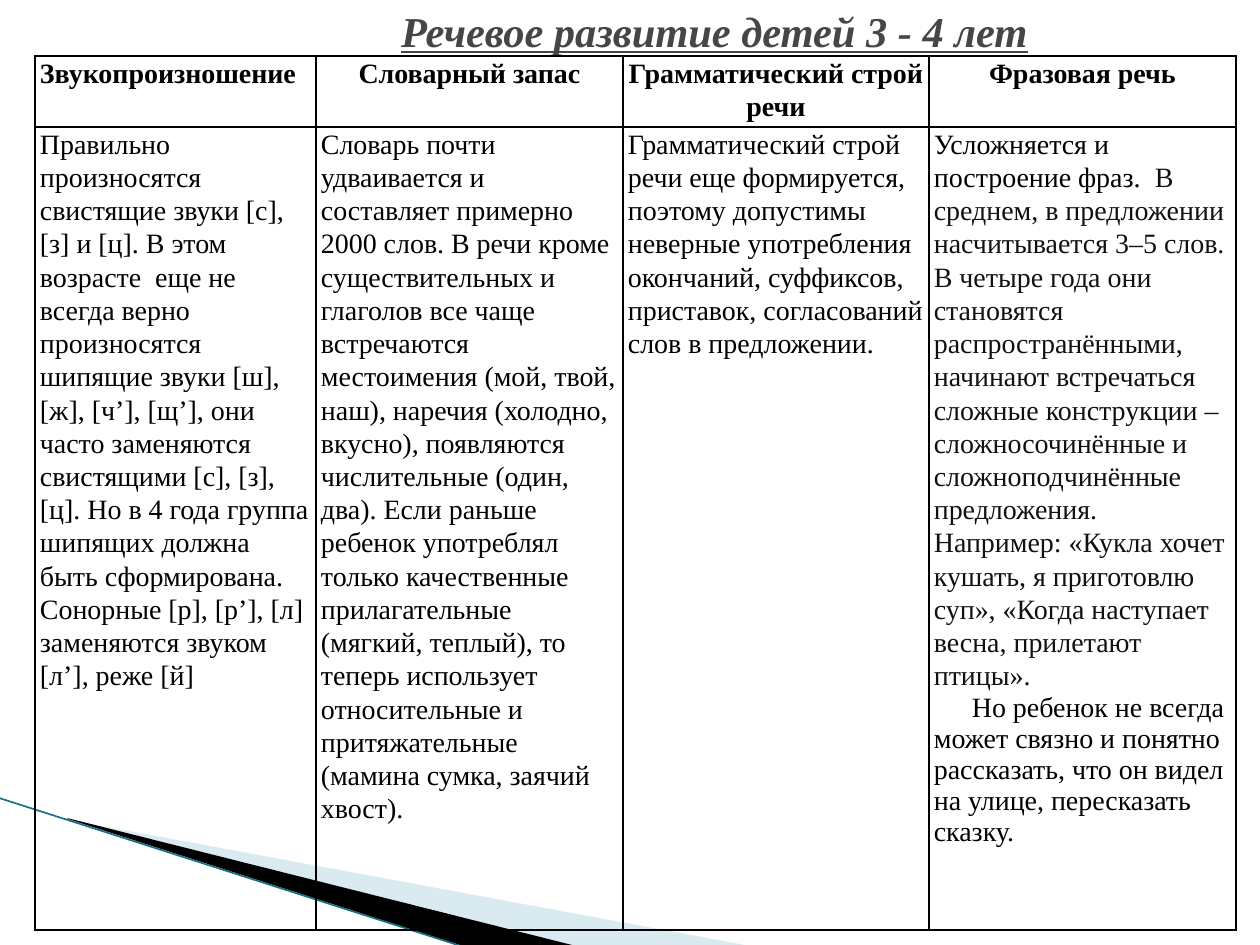
from lxml.etree import SubElement
from pptx import Presentation
from pptx.dml.color import RGBColor
from pptx.enum.shapes import MSO_CONNECTOR as Connector
from pptx.enum.text import MSO_ANCHOR as Anchor, PP_ALIGN as Align
from pptx.oxml.ns import qn
from pptx.util import Pt

EMU_PER_PX = 914400 / 126
COLORS = {
    "title": "464646",
    "text": "000000",
    "soft_text": "111111",
    "border": "000000",
    "pale_wedge": "A0CBDC",
    "dark_wedge": "000000",
    "edge": "1B6F85",
}


def px(value):
    return round(value * EMU_PER_PX)


class SlideBuilder:
    font_name = "Times New Roman"
    text_size = 16
    line_spacing = 1.07
    cell_inset = 5

    def __init__(self, slide):
        self.slide = slide

    def color(self, name):
        return RGBColor.from_string(COLORS[name])

    def style_font(self, font, size, color, bold=False):
        font.name = self.font_name
        font.size = Pt(size)
        font.bold = bold
        font.color.rgb = self.color(color)

    def title(self, text, left, top, width, height):
        shape = self.slide.shapes.title
        shape.left, shape.top = px(left), px(top)
        shape.width, shape.height = px(width), px(height)
        frame = shape.text_frame
        frame.text = text
        frame.word_wrap = True
        frame.vertical_anchor = Anchor.MIDDLE
        frame.margin_top = frame.margin_bottom = 0
        paragraph = frame.paragraphs[0]
        paragraph.alignment = Align.CENTER
        font = paragraph.runs[0].font
        self.style_font(font, 24.3, "title", bold=True)
        font.italic = font.underline = True

    def wedge(self, points, color, opacity=100):
        builder = self.slide.shapes.build_freeform(*points[0], scale=EMU_PER_PX)
        builder.add_line_segments(points[1:], close=True)
        shape = builder.convert_to_shape()
        shape.shadow.inherit = False
        shape.line.fill.background()
        shape.fill.solid()
        shape.fill.fore_color.rgb = self.color(color)
        if opacity < 100:
            tone = shape.fill._xPr.find(qn("a:solidFill"))[0]
            SubElement(tone, qn("a:alpha"), val=str(opacity * 1000))

    def line(self, start, end, color, width):
        ends = [px(value) for value in (*start, *end)]
        connector = self.slide.shapes.add_connector(Connector.STRAIGHT, *ends)
        connector.line.color.rgb = self.color(color)
        connector.line.width = Pt(width)
        SubElement(connector._element.spPr, qn("a:effectLst"))

    def table(self, rows, left, top, widths, heights):
        frame = self.slide.shapes.add_table(
            len(heights), len(widths), px(left), px(top),
            px(sum(widths)), px(sum(heights)))
        table = frame.table
        table.first_row = table.horz_banding = False
        for column, width in zip(table.columns, widths):
            column.width = px(width)
        for row, height in zip(table.rows, heights):
            row.height = px(height)
        for row_index, row in enumerate(rows):
            for column_index, paragraphs in enumerate(row):
                header = row_index == 0
                centered = header and column_index > 0
                self.cell(table.cell(row_index, column_index),
                          paragraphs, header, centered)

    def cell(self, cell, paragraphs, bold, centered):
        cell.margin_left = cell.margin_right = px(self.cell_inset)
        cell.margin_top = cell.margin_bottom = 0
        cell.vertical_anchor = Anchor.TOP
        self.borders(cell)
        cell.fill.background()
        frame = cell.text_frame
        for index, (runs, indent) in enumerate(paragraphs):
            paragraph = frame.add_paragraph() if index else frame.paragraphs[0]
            paragraph.alignment = Align.CENTER if centered else Align.LEFT
            if indent:
                properties = paragraph._p.get_or_add_pPr()
                properties.set("marL", "0")
                properties.set("indent", str(px(indent)))
            else:
                paragraph.line_spacing = self.line_spacing
            for text, color in runs:
                run = paragraph.add_run()
                run.text = text
                self.style_font(run.font, self.text_size, color, bold)

    def borders(self, cell):
        properties = cell._tc.get_or_add_tcPr()
        for side in ("lnL", "lnR", "lnT", "lnB"):
            border = SubElement(properties, qn(f"a:{side}"), w=str(Pt(1)))
            fill = SubElement(border, qn("a:solidFill"))
            SubElement(fill, qn("a:srgbClr"), val=COLORS["border"])


def plain(text):
    return [(text, "text")], 0


HEADERS = ["Звукопроизношение", "Словарный запас",
           "Грамматический строй речи", "Фразовая речь"]

SOUNDS = [
    plain("Правильно произносятся свистящие звуки [с], [з] и [ц]. В этом "
          "возрасте  еще не всегда верно произносятся шипящие звуки [ш], [ж], "
          "[ч’], [щ’], они часто заменяются свистящими [с], [з], [ц]. Но в "
          "4 года группа шипящих должна быть сформирована."),
    plain("Сонорные [р], [р’], [л]  заменяются звуком [л’], реже [й]"),
]
VOCABULARY = [
    plain("Словарь почти удваивается и составляет примерно 2000 слов. В речи "
          "кроме существительных и глаголов все чаще встречаются местоимения "
          "(мой, твой, наш), наречия (холодно, вкусно), появляются "
          "числительные (один, два). Если раньше ребенок употреблял только "
          "качественные прилагательные (мягкий, теплый), то теперь использует "
          "относительные и притяжательные (мамина сумка, заячий хвост)."),
]
GRAMMAR = [
    plain("Грамматический строй речи еще формируется, поэтому допустимы "
          "неверные употребления окончаний, суффиксов, приставок, "
          "согласований слов в предложении."),
]
PHRASES = [
    ([("Усложняется и построение фраз.", "text"),
      ("  В среднем, в предложении насчитывается 3–5 слов. В четыре года они "
       "становятся распространёнными, начинают встречаться сложные "
       "конструкции – сложносочинённые и сложноподчинённые предложения. "
       "Например: «Кукла хочет кушать, я приготовлю суп», «Когда наступает "
       "весна, прилетают птицы».", "soft_text")], 0),
    ([("Но ребенок не всегда может связно и понятно рассказать, что он видел "
       "на улице, пересказать сказку.", "text")], 38),
]


def main():
    presentation = Presentation()
    presentation.slide_width, presentation.slide_height = px(1260), px(945)
    layout = presentation.slide_layouts.get_by_name("Title Only")
    builder = SlideBuilder(presentation.slides.add_slide(layout))

    # Corner decoration
    builder.wedge([(69, 820), (750, 946), (575, 946), (69, 819)],
                  "pale_wedge", opacity=40)
    builder.wedge([(67, 818), (576, 946), (469, 948), (68, 819)], "dark_wedge")
    builder.line((-1, 798), (467, 948), "edge", 0.95)

    # Title
    builder.title("Речевое развитие детей 3 - 4 лет", 198, 5, 1033, 50)

    # Speech development table
    builder.table([[[plain(header)] for header in HEADERS],
                   [SOUNDS, VOCABULARY, GRAMMAR, PHRASES]],
                  35, 56, [281, 307, 306, 307], [71, 803])

    presentation.save("out.pptx")


if __name__ == "__main__":
    main()
